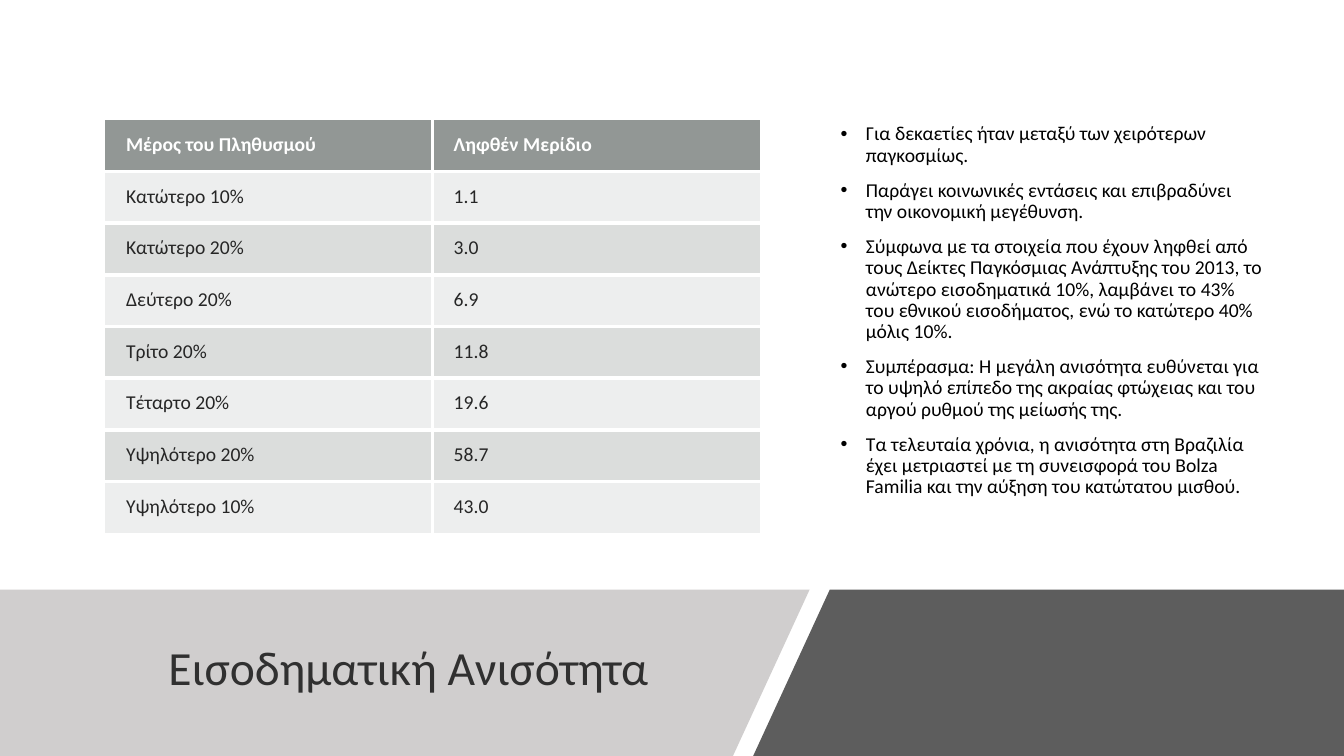
from pptx import Presentation
from pptx.dml.color import RGBColor
from pptx.enum.text import MSO_ANCHOR, PP_ALIGN
from pptx.oxml import parse_xml
from pptx.oxml.ns import nsdecls
from pptx.util import Inches, Pt

FONT = "Calibri"


def hue(fill, code):
    fill.solid()
    fill.fore_color.rgb = RGBColor.from_string(code)


def style(para, size, code):
    font = para.runs[0].font
    font.name, font.size = FONT, Pt(size)
    hue(font.fill, code)


deck = Presentation()
deck.slide_width, deck.slide_height = Inches(13.33), Inches(7.5)
slide = deck.slides.add_slide(deck.slide_layouts[5])
shapes = slide.shapes

# Slanted bands along the foot
top, foot, slant = 5.85, 7.5, 0.76
bands = [
    ("5D5D5D", [(8.23, top), (13.33, top), (13.33, foot), (8.23 - slant, foot)]),
    ("D0CECE", [(0, top), (8.03, top), (8.03 - slant, foot), (0, foot)]),
]
for code, dots in bands:
    dots = [(Inches(x), Inches(y)) for x, y in dots]
    pen = shapes.build_freeform(*dots[0])
    pen.add_line_segments(dots[1:], close=True)
    band = pen.convert_to_shape()
    band.shadow.inherit = False
    hue(band.fill, code)
    band.line.fill.background()

# Title, brought in front of the bands
title = shapes.title
shapes._spTree.append(title._element)
title.left, title.top = Inches(1.04), Inches(6.05)
title.width, title.height = Inches(6.23), Inches(1.2)
frame = title.text_frame
frame.text = "Εισοδηματική Ανισότητα"
frame.vertical_anchor = MSO_ANCHOR.MIDDLE
frame.margin_left = Inches(0.63)
para = frame.paragraphs[0]
para.alignment, para.line_spacing = PP_ALIGN.LEFT, 0.9
style(para, 34, "303030")

# Bulleted notes on the right
points = [
    "Για δεκαετίες ήταν μεταξύ των χειρότερων παγκοσμίως.",
    "Παράγει κοινωνικές εντάσεις και επιβραδύνει την οικονομική μεγέθυνση.",
    "Σύμφωνα με τα στοιχεία που έχουν ληφθεί από τους Δείκτες Παγκόσμιας "
    "Ανάπτυξης του 2013, το ανώτερο εισοδηματικά 10%, λαμβάνει το 43% του "
    "εθνικού εισοδήματος, ενώ το κατώτερο 40% μόλις 10%.",
    "Συμπέρασμα: Η μεγάλη ανισότητα ευθύνεται για το υψηλό επίπεδο της "
    "ακραίας φτώχειας και του αργού ρυθμού της μείωσής της.",
    "Τα τελευταία χρόνια, η ανισότητα στη Βραζιλία έχει μετριαστεί με τη "
    "συνεισφορά του Bolza Familia και την αύξηση του κατώτατου μισθού.",
]
box = shapes.add_textbox(Inches(8.24), Inches(1.06), Inches(4.38), Inches(4.4))
frame = box.text_frame
frame.word_wrap = True
frame.vertical_anchor = MSO_ANCHOR.MIDDLE
frame.margin_bottom = Inches(0.4)
frame.text = "\n".join(points)
for para in frame.paragraphs:
    para.line_spacing, para.space_before = 0.9, Pt(10)
    style(para, 14, "000000")
    props = para._p.get_or_add_pPr()
    props.set("marL", str(Inches(0.25)))
    props.set("indent", str(-Inches(0.25)))
    props.append(parse_xml(f'<a:buFont {nsdecls("a")} typeface="Arial"/>'))
    props.append(parse_xml(f'<a:buChar {nsdecls("a")} char="•"/>'))

# Income table
data = [
    ("Μέρος του Πληθυσμού", "Ληφθέν Μερίδιο"),
    ("Κατώτερο 10%", "1.1"),
    ("Κατώτερο 20%", "3.0"),
    ("Δεύτερο 20%", "6.9"),
    ("Τρίτο 20%", "11.8"),
    ("Τέταρτο 20%", "19.6"),
    ("Υψηλότερο 20%", "58.7"),
    ("Υψηλότερο 10%", "43.0"),
]
rows, cols = len(data), len(data[0])
table = shapes.add_table(rows, cols, Inches(1.04), Inches(1.19),
                         Inches(6.5), Inches(4.1)).table
table.horz_banding = False
# The plain style has neither fills nor lines
table._tbl.tblPr[0].text = "{2D5ABB26-0587-4C30-8999-92F81FD0307C}"

for r, line in enumerate(data):
    for c, word in enumerate(line):
        cell = table.cell(r, c)
        cell.margin_left = Inches(0.21)
        cell.margin_right = cell.margin_top = cell.margin_bottom = Inches(0.13)
        cell.text_frame.text = word
        para = cell.text_frame.paragraphs[0]
        style(para, 14, "262626" if r else "FFFFFF")
        para.runs[0].font.bold = r == 0
        hue(cell.fill, ("DBDDDC" if r % 2 == 0 else "EDEEEE") if r else "929795")
        # White rules on inner edges only
        edges = {"lnL": c > 0, "lnR": c < cols - 1,
                 "lnT": r > 0, "lnB": r < rows - 1}
        inner = [tag for tag, shown in edges.items() if shown]
        for spot, tag in enumerate(inner):
            cell._tc.tcPr.insert(spot, parse_xml(
                f'<a:{tag} {nsdecls("a")} w="{Pt(3)}"><a:solidFill>'
                f'<a:srgbClr val="FFFFFF"/></a:solidFill></a:{tag}>'))

deck.save("out.pptx")
